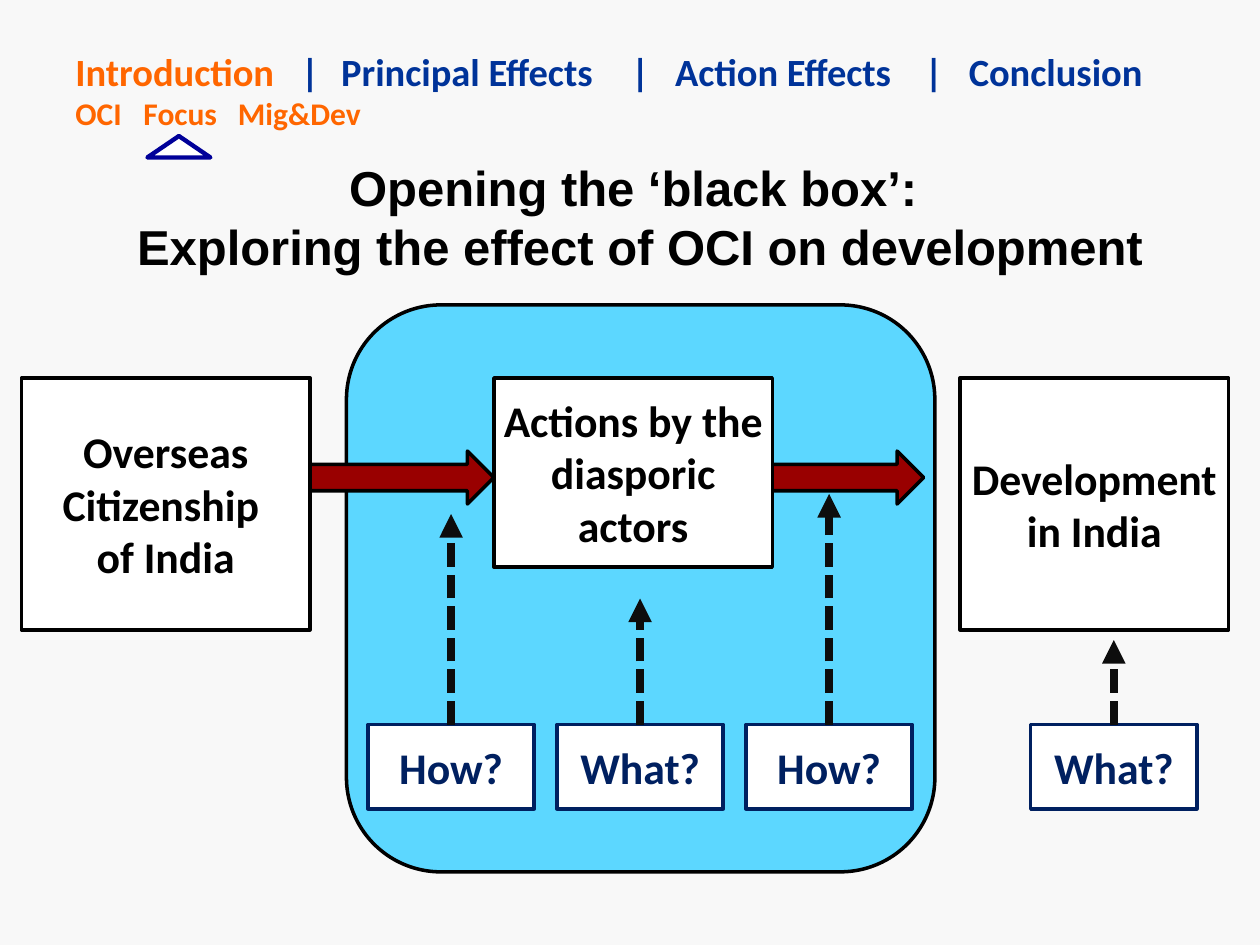
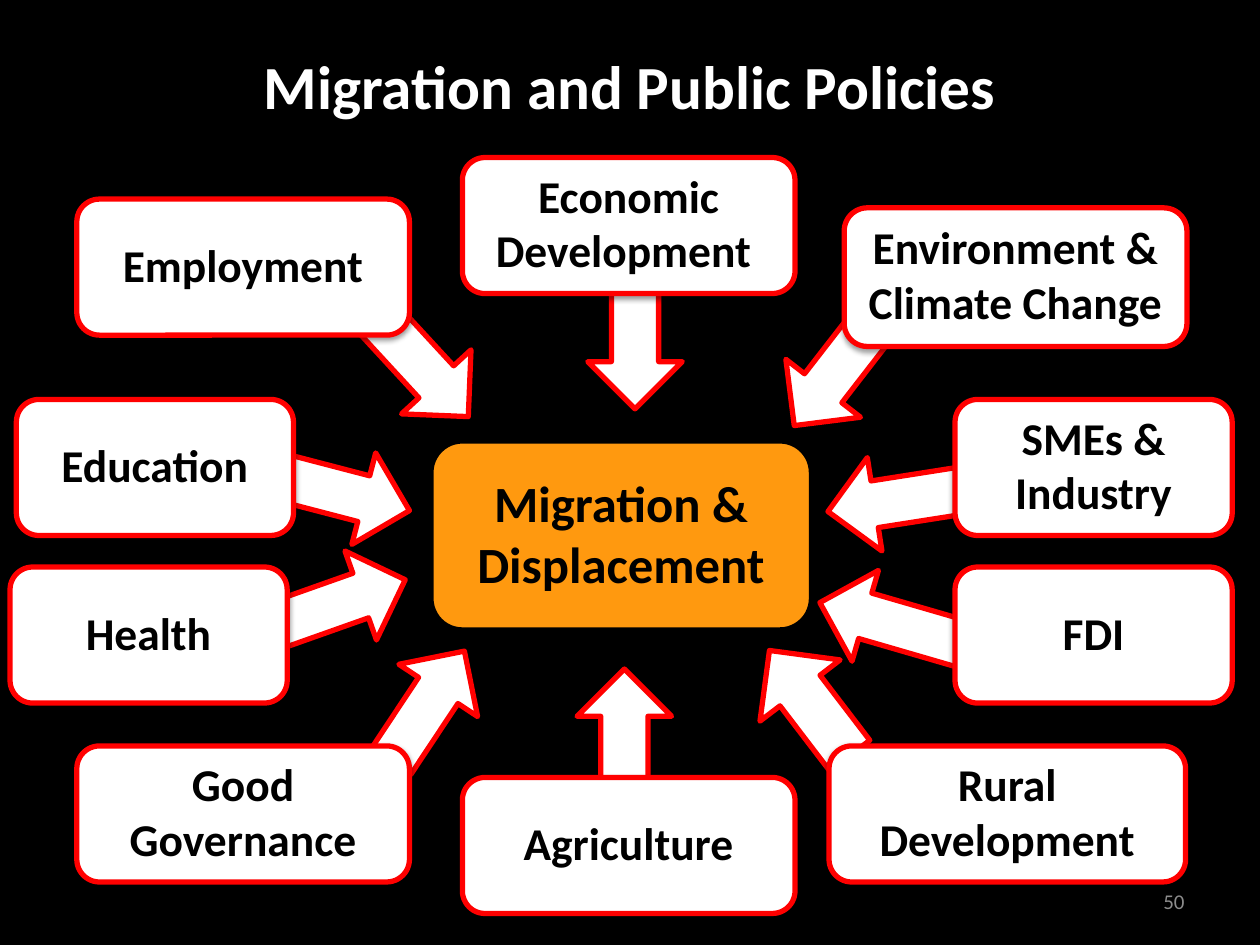
import dataclasses

import lxml.etree
import pptx
import pptx.dml.color
import pptx.enum.shapes
import pptx.enum.text
import pptx.oxml.ns
import pptx.util

Inches = pptx.util.Inches
Pt = pptx.util.Pt
qn = pptx.oxml.ns.qn
SHAPE = pptx.enum.shapes.MSO_SHAPE
ALIGN = pptx.enum.text.PP_ALIGN
ANCHOR = pptx.enum.text.MSO_ANCHOR


@dataclasses.dataclass(frozen=True)
class Theme:
    font: str = "Calibri"
    heading_font: str = "Arial"
    paper: str = "F8F8F8"
    black: str = "000000"
    white: str = "FFFFFF"
    navy: str = "002060"
    nav_active: str = "FF6600"
    nav_idle: str = "003399"
    marker: str = "000099"
    black_box: str = "5CD7FF"
    effect_arrow: str = "990000"
    question_arrow: str = "0D0D0D"
    hub: str = "FF990F"
    policy_line: str = "FF0000"
    page_number: str = "8C8C8C"
    nav_size: float = 22
    subnav_size: float = 18
    heading_size: float = 28
    factor_size: float = 25
    title_size: float = 35
    hub_size: float = 29
    policy_size: float = 26
    page_size: float = 12


THEME = Theme()
SLIDE_WIDTH, SLIDE_HEIGHT = 10, 7.5

# Slide 1: navigation entries with the tab stop of each, in inches
SECTIONS = [("Introduction", 0), ("|", 1.79), ("Principal Effects", 2.11), ("|", 4.41),
            ("Action Effects", 4.76), ("|", 6.74), ("Conclusion", 7.09)]
SUBSECTIONS = [("OCI", 0), ("Focus", 0.54), ("Mig&Dev", 1.29)]
HEADING = "Opening the ‘black box’: \nExploring the effect of OCI on development"
BLACK_BOX = (2.75, 2.42, 4.67, 4.5)
EFFECT_ARROWS = [(6.08, 3.58, 1.25, 0.42), (2.17, 3.58, 1.75, 0.42)]
FACTORS = [
    ("Overseas Citizenship \nof India", (0.17, 3, 2.29, 2)),
    ("Actions by the diasporic actors", (3.92, 3, 2.21, 1.5)),
    ("Development\nin India", (7.62, 3, 2.13, 2)),
]
QUESTION_TOP, QUESTION_WIDTH, QUESTION_HEIGHT = 5.75, 1.32, 0.67
# question, left edge, height its arrow reaches
QUESTIONS = [("How?", 2.92, 4.08), ("What?", 4.42, 4.75), ("How?", 5.92, 3.92), ("What?", 8.18, 5.08)]

# Slide 2: policy, box, arrow (left, top, width, height), arrow rotation
TITLE = "Migration and Public Policies"
HUB = ("Migration & Displacement", (3.42, 3.5, 3.02, 1.5))
PAGE_NUMBER = "50"
POLICIES = [
    ("Education", (0.13, 3.17, 2.2, 1.08), (1.4, 3.44, 1.88, 0.75), 194.6),
    ("Health", (0.08, 4.5, 2.2, 1.08), (1.39, 4.54, 1.88, 0.75), 160.5),
    ("Good Governance", (0.61, 5.92, 2.64, 1.08), (2.87, 5.23, 1.05, 0.75), 123.6),
    ("Rural Development", (6.58, 5.92, 2.83, 1.08), (5.9, 5.18, 1.05, 0.8), 52.6),
    ("FDI", (7.58, 4.5, 2.2, 1.08), (6.47, 4.67, 1.88, 0.75), 16.2),
    ("SMEs & Industry", (7.58, 3.17, 2.2, 1.08), (6.56, 3.54, 1.88, 0.75), 351.1),
    ("Economic Development ", (3.67, 1.25, 2.64, 1.08), (4.25, 2.08, 1.58, 0.75), 270),
    ("Employment", (0.61, 1.58, 2.64, 1.08), (2.14, 2.24, 1.88, 0.75), 227.3),
    ("Environment & Climate Change", (6.7, 1.65, 2.72, 1.1), (5.94, 2.26, 1.88, 0.75), 307.8),
    ("Agriculture", (3.67, 6.17, 2.64, 1.08), (4.43, 5.46, 1.05, 0.75), 90),
]


def rgb(color):
    return pptx.dml.color.RGBColor.from_string(color)


def inches(box):
    return [Inches(length) for length in box]


def add_child(parent, tag, **attributes):
    """Append a drawing element such as a:tab, with its attributes."""
    values = {name: str(value) for name, value in attributes.items()}
    return lxml.etree.SubElement(parent, qn(tag), values)


def format_run(run, size, color, bold=True, font=THEME.font):
    run.font.name = font
    run.font.size = Pt(size)
    run.font.bold = bold
    run.font.color.rgb = rgb(color)


def write(shape, text, size, color, align=ALIGN.CENTER, anchor=ANCHOR.MIDDLE,
          margins=(0, 0, 0, 0), space_after=0, **run_format):
    frame = shape.text_frame
    frame.word_wrap = True
    frame.vertical_anchor = anchor
    frame.margin_left, frame.margin_top, frame.margin_right, frame.margin_bottom = inches(margins)
    frame.text = text
    for paragraph in frame.paragraphs:
        paragraph.alignment = align
        paragraph.space_after = Pt(space_after)
        for run in paragraph.runs:
            format_run(run, size, color, **run_format)


def add_shape(slide, kind, box, fill, line=None, line_width=2, shadow=False):
    shape = slide.shapes.add_shape(kind, *inches(box))
    shape.fill.solid()
    shape.fill.fore_color.rgb = rgb(fill)
    if line:
        shape.line.color.rgb = rgb(line)
        shape.line.width = Pt(line_width)
    else:
        shape.line.fill.background()
    shape.shadow.inherit = False
    if shadow:
        effects = shape._element.spPr.find(qn("a:effectLst"))
        outer = add_child(effects, "a:outerShdw", blurRad=Pt(3.1), dist=Pt(1.6),
                          dir=5400000, rotWithShape=0)
        tint = add_child(outer, "a:srgbClr", val=THEME.black)
        add_child(tint, "a:alpha", val=38000)
    return shape


def add_text(slide, text, box, size, color, **options):
    write(slide.shapes.add_textbox(*inches(box)), text, size, color, **options)


def add_question_arrow(slide, question, end_y):
    """Dashed arrow rising from the top of a question box."""
    x = question.left + question.width // 2
    arrow = slide.shapes.add_connector(pptx.enum.shapes.MSO_CONNECTOR.STRAIGHT,
                                       x, question.top, x, Inches(end_y))
    arrow.begin_connect(question, 0)
    arrow.line.color.rgb = rgb(THEME.question_arrow)
    arrow.line.width = Pt(4.5)
    properties = arrow._element.spPr
    line = properties.find(qn("a:ln"))
    add_child(line, "a:prstDash", val="sysDash")
    add_child(line, "a:tailEnd", type="triangle")
    add_child(properties, "a:effectLst")


def add_tabbed_entries(paragraph, entries, size, idle_color):
    """Set entries at their tab stops; the first one has the active colour."""
    tabs = add_child(paragraph._p.get_or_add_pPr(), "a:tabLst")
    for index, (label, stop) in enumerate(entries):
        if index:
            add_child(tabs, "a:tab", pos=Inches(stop), algn="l")
        run = paragraph.add_run()
        run.text = "\t" + label if index else label
        format_run(run, size, idle_color if index else THEME.nav_active)


def add_navigation(slide):
    frame = slide.shapes.add_textbox(*inches((0.5, 0.33, 9.25, 1.25))).text_frame
    frame.word_wrap = True
    add_tabbed_entries(frame.paragraphs[0], SECTIONS, THEME.nav_size, THEME.nav_idle)
    add_tabbed_entries(frame.add_paragraph(), SUBSECTIONS, THEME.subnav_size, THEME.nav_active)
    add_shape(slide, SHAPE.ISOSCELES_TRIANGLE, (1.17, 1.08, 0.5, 0.17),
              THEME.white, THEME.marker, 2.5)


def new_slide(presentation):
    slide = presentation.slides.add_slide(presentation.slide_layouts[6])
    slide.background.fill.solid()
    slide.background.fill.fore_color.rgb = rgb(THEME.paper)
    return slide


def build_black_box(presentation):
    slide = new_slide(presentation)
    add_shape(slide, SHAPE.ROUNDED_RECTANGLE, BLACK_BOX, THEME.black_box, THEME.black)
    for box in EFFECT_ARROWS:
        add_shape(slide, SHAPE.RIGHT_ARROW, box, THEME.effect_arrow, THEME.black)
    for text, box in FACTORS:
        factor = add_shape(slide, SHAPE.RECTANGLE, box, THEME.white, THEME.black)
        write(factor, text, THEME.factor_size, THEME.black)
    for text, left, arrow_end in QUESTIONS:
        box = (left, QUESTION_TOP, QUESTION_WIDTH, QUESTION_HEIGHT)
        question = add_shape(slide, SHAPE.RECTANGLE, box, THEME.white, THEME.navy)
        write(question, text, THEME.factor_size, THEME.navy)
        add_question_arrow(slide, question, arrow_end)
    add_text(slide, HEADING, (0.58, 1.25, 9, 0.94), THEME.heading_size, THEME.black,
             anchor=ANCHOR.TOP, font=THEME.heading_font)
    add_navigation(slide)


def build_policies(presentation):
    slide = new_slide(presentation)
    add_shape(slide, SHAPE.RECTANGLE, (0, 0, SLIDE_WIDTH, SLIDE_HEIGHT), THEME.black)
    for _, _, arrow_box, rotation in POLICIES:
        arrow = add_shape(slide, SHAPE.LEFT_ARROW, arrow_box, THEME.white,
                          THEME.policy_line, 3, shadow=True)
        arrow.rotation = rotation
    text_margins = (0.1, 0.05, 0.1, 0.05)
    add_text(slide, TITLE, (0.5, 0.33, 9, 1.08), THEME.title_size, THEME.white,
             anchor=ANCHOR.TOP, margins=text_margins)
    add_text(slide, PAGE_NUMBER, (7.17, 6.95, 2.33, 0.4), THEME.page_size, THEME.page_number,
             align=ALIGN.RIGHT, margins=text_margins, bold=False)
    hub_text, hub_box = HUB
    hub = add_shape(slide, SHAPE.ROUNDED_RECTANGLE, hub_box, THEME.hub, THEME.black, 3, shadow=True)
    write(hub, hub_text, THEME.hub_size, THEME.black, margins=(0.04, 0, 0.04, 0.05))
    for text, box, _, _ in POLICIES:
        policy = add_shape(slide, SHAPE.ROUNDED_RECTANGLE, box, THEME.white,
                           THEME.policy_line, 3, shadow=True)
        write(policy, text, THEME.policy_size, THEME.black,
              margins=(0.1, 0, 0.1, 0.05), space_after=6)


def main():
    presentation = pptx.Presentation()
    presentation.slide_width = Inches(SLIDE_WIDTH)
    presentation.slide_height = Inches(SLIDE_HEIGHT)
    build_black_box(presentation)
    build_policies(presentation)
    presentation.save("out.pptx")


if __name__ == "__main__":
    main()
